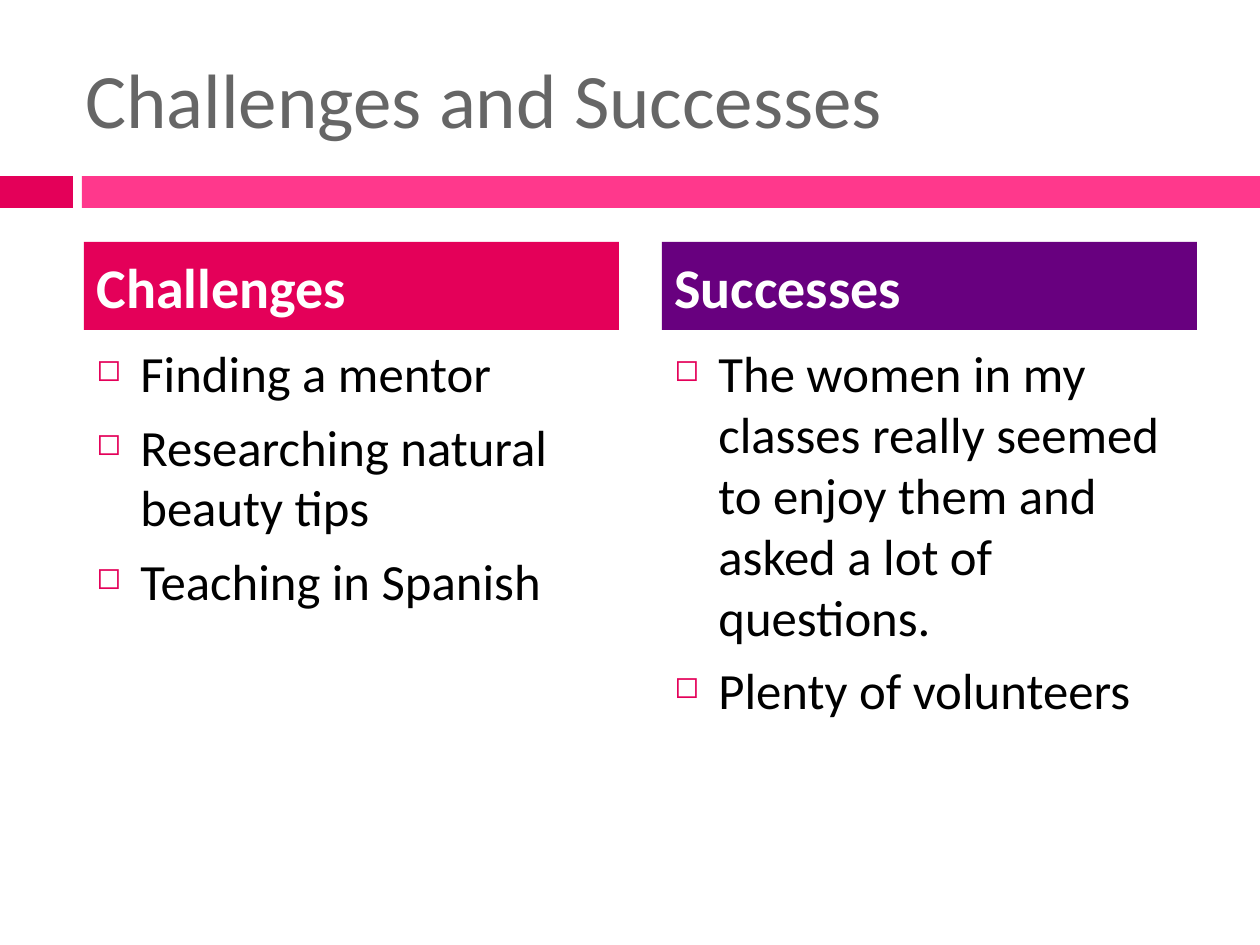
from dataclasses import dataclass

from lxml import etree
from pptx import Presentation
from pptx.dml.color import RGBColor
from pptx.enum.shapes import MSO_SHAPE
from pptx.enum.text import MSO_ANCHOR, PP_ALIGN
from pptx.oxml.ns import qn
from pptx.util import Emu, Pt

RECT = MSO_SHAPE.RECTANGLE
TOP, MIDDLE = MSO_ANCHOR.TOP, MSO_ANCHOR.MIDDLE
LEFT = PP_ALIGN.LEFT

PX = 914400 / 126
SLIDE_W, SLIDE_H = 1260, 945
COLUMN_W = 535
HEADING_Y, HEADING_H = 242, 88
LIST_Y, LIST_H = 336, 494
INDENT = 44
FONT = "Calibri"
COLORS = {
    "crimson": "E40059",
    "pink": "FF388C",
    "purple": "68007F",
    "gray": "666666",
    "black": "000000",
    "white": "FFFFFF",
}


@dataclass
class Box:
    x: int
    y: int
    w: int
    h: int

    def emu(self) -> list[Emu]:
        return [px(n) for n in (self.x, self.y, self.w, self.h)]


@dataclass
class Column:
    x: int
    heading: str
    color: str
    items: list[str]


BANDS = [(Box(0, 176, 73, 32), "crimson"), (Box(82, 176, 1178, 32), "pink")]
COLUMNS = [
    Column(84, "Challenges", "crimson",
           ["Finding a mentor", "Researching natural beauty tips", "Teaching in Spanish"]),
    Column(662, "Successes", "purple",
           ["The women in my classes really seemed to enjoy them and asked a lot of questions.",
            "Plenty of volunteers"]),
]


def px(n: int) -> Emu:
    return Emu(round(n * PX))


def rgb(name: str) -> RGBColor:
    return RGBColor.from_string(COLORS[name])


def add_rect(slide, box: Box, color: str):
    sp = slide.shapes.add_shape(RECT, *box.emu())
    sp.shadow.inherit = False
    sp.fill.solid()
    sp.fill.fore_color.rgb = rgb(color)
    sp.line.fill.background()
    return sp


def add_bullet(p) -> None:
    """Give the paragraph a hanging square bullet."""
    pPr = p._p.get_or_add_pPr()
    pPr.set("marL", str(px(INDENT)))
    pPr.set("indent", str(-px(INDENT)))
    clr = etree.SubElement(pPr, qn("a:buClr"))
    etree.SubElement(clr, qn("a:srgbClr"), val=COLORS["crimson"])
    etree.SubElement(pPr, qn("a:buSzPct"), val="60000")
    etree.SubElement(pPr, qn("a:buChar"), char="◻")


def write(sp, lines: list[str], *, size: int, color: str, bold: bool = False,
          anchor=MIDDLE, before: int = 0, bullets: bool = False) -> None:
    tf = sp.text_frame
    tf.word_wrap = True
    tf.vertical_anchor = anchor
    for i, line in enumerate(lines):
        p = tf.add_paragraph() if i else tf.paragraphs[0]
        p.alignment = LEFT
        p.space_before = Pt(before)
        if bullets:
            add_bullet(p)
        r = p.add_run()
        r.text = line
        r.font.name = FONT
        r.font.size = Pt(size)
        r.font.bold = bold
        r.font.color.rgb = rgb(color)


def add_column(slide, column: Column) -> None:
    body = slide.shapes.add_textbox(*Box(column.x, LIST_Y, COLUMN_W, LIST_H).emu())
    write(body, column.items, size=29, color="black", anchor=TOP, before=7, bullets=True)
    heading = add_rect(slide, Box(column.x, HEADING_Y, COLUMN_W, HEADING_H), column.color)
    write(heading, [column.heading], size=32, color="white", bold=True, before=7)


def main() -> None:
    prs = Presentation()
    prs.slide_width, prs.slide_height = px(SLIDE_W), px(SLIDE_H)
    slide = prs.slides.add_slide(prs.slide_layouts[6])
    for box, color in BANDS:
        add_rect(slide, box, color)
    title = slide.shapes.add_textbox(*Box(73, 38, 1124, 120).emu())
    write(title, ["Challenges and Successes"], size=44, color="gray")
    for column in COLUMNS:
        add_column(slide, column)
    prs.save("out.pptx")


if __name__ == "__main__":
    main()
